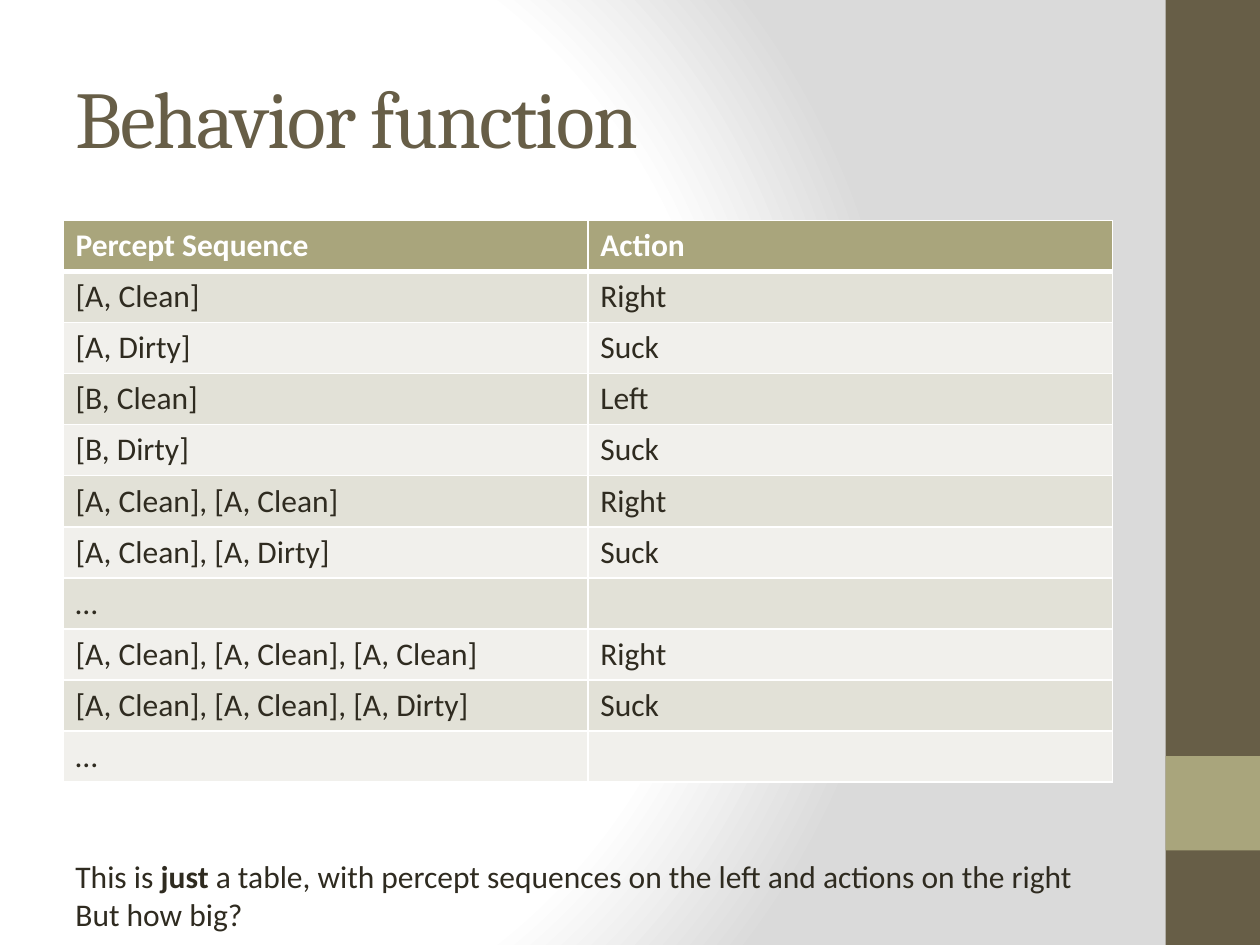
from typing import NamedTuple

from lxml.etree import SubElement
from pptx import Presentation
from pptx.dml.color import RGBColor
from pptx.enum.shapes import MSO_SHAPE
from pptx.enum.text import MSO_ANCHOR
from pptx.oxml import parse_xml
from pptx.oxml.ns import nsdecls, qn
from pptx.util import Inches, Pt

WHITE = RGBColor(0xFF, 0xFF, 0xFF)
GREY = RGBColor(0xDA, 0xDA, 0xDA)
BROWN = RGBColor(0x67, 0x5E, 0x47)
OLIVE = RGBColor(0xA9, 0xA5, 0x7C)
INK = RGBColor(0x2F, 0x2B, 0x20)
BAND_DARK = RGBColor(0xE2, 0xE1, 0xD7)
BAND_LIGHT = RGBColor(0xF1, 0xF0, 0xEC)


class SidePanel(NamedTuple):
    top: float
    height: float
    color: RGBColor


class Rule(NamedTuple):
    percepts: str
    action: str


SIDE_PANELS = [SidePanel(0, 7.5, BROWN), SidePanel(6, 0.75, OLIVE)]
RULES = [
    Rule("Percept Sequence", "Action"),
    Rule("[A, Clean]", "Right"),
    Rule("[A, Dirty]", "Suck"),
    Rule("[B, Clean]", "Left"),
    Rule("[B, Dirty]", "Suck"),
    Rule("[A, Clean], [A, Clean]", "Right"),
    Rule("[A, Clean], [A, Dirty]", "Suck"),
    Rule("…", ""),
    Rule("[A, Clean], [A, Clean], [A, Clean]", "Right"),
    Rule("[A, Clean], [A, Clean], [A, Dirty]", "Suck"),
    Rule("…", ""),
]


def set_background(slide) -> None:
    stops = "".join(
        f'<a:gs pos="{position * 1000}"><a:srgbClr val="{color}"/></a:gs>'
        for position, color in [(0, WHITE), (75, WHITE), (100, GREY)]
    )
    background = parse_xml(
        f'<p:bg {nsdecls("p", "a")}><p:bgPr><a:gradFill rotWithShape="1">'
        f'<a:gsLst>{stops}</a:gsLst><a:path path="circle">'
        '<a:fillToRect l="20000" t="50000" r="100000" b="50000"/></a:path>'
        "</a:gradFill><a:effectLst/></p:bgPr></p:bg>"
    )
    slide.element.cSld.insert(0, background)


def draw_side_panel(slide, panel: SidePanel) -> None:
    shape = slide.shapes.add_shape(
        MSO_SHAPE.RECTANGLE, Inches(9.25), Inches(panel.top), Inches(0.75), Inches(panel.height)
    )
    shape.shadow.inherit = False
    shape.fill.solid()
    shape.fill.fore_color.rgb = panel.color
    shape.line.fill.background()


def add_text(paragraph, text: str, *, size: float = 18, font: str = "Calibri",
             color: RGBColor = INK, bold: bool = False, spacing: float = 0) -> None:
    run = paragraph.add_run()
    run.text = text
    run.font.size = Pt(size)
    run.font.name = font
    run.font.color.rgb = color
    run.font.bold = bold
    if spacing:
        run.font._element.set("spc", str(int(spacing * 100)))


def add_text_frame(slide, left: float, top: float, width: float, height: float):
    box = slide.shapes.add_textbox(Inches(left), Inches(top), Inches(width), Inches(height))
    box.text_frame.word_wrap = True
    return box.text_frame


def set_borders(cell, bottom_width: float) -> None:
    properties = cell._tc.get_or_add_tcPr()
    widths = {"a:lnL": 1, "a:lnR": 1, "a:lnT": 1, "a:lnB": bottom_width}
    for tag, width in widths.items():
        line = SubElement(properties, qn(tag), w=str(Pt(width)))
        fill = SubElement(line, qn("a:solidFill"))
        SubElement(fill, qn("a:srgbClr"), val=str(WHITE))


def draw_table(slide, rules: list[Rule]) -> None:
    width, height = Inches(8.33), Inches(4.46)
    table = slide.shapes.add_table(
        len(rules), 2, Inches(0.5), Inches(1.75), width, height
    ).table
    for row_index, rule in enumerate(rules):
        header = row_index == 0
        band = BAND_DARK if row_index % 2 else BAND_LIGHT
        for column_index, text in enumerate(rule):
            cell = table.cell(row_index, column_index)
            set_borders(cell, 3 if header else 1)
            cell.fill.solid()
            cell.fill.fore_color.rgb = OLIVE if header else band
            if text:
                add_text(cell.text_frame.paragraphs[0], text,
                         color=WHITE if header else INK, bold=header)
        # A thick rule under the header meets the first body row
        if row_index == 1:
            for cell in table.rows[row_index].cells:
                cell._tc.tcPr.find(qn("a:lnT")).set("w", str(Pt(3)))


def main() -> None:
    presentation = Presentation()
    presentation.slide_width = Inches(10)
    presentation.slide_height = Inches(7.5)
    slide = presentation.slides.add_slide(presentation.slide_layouts[6])

    # Background and side bar
    set_background(slide)
    for panel in SIDE_PANELS:
        draw_side_panel(slide, panel)

    # Title
    title = add_text_frame(slide, 0.5, 0.3, 8.33, 1.25)
    title.vertical_anchor = MSO_ANCHOR.MIDDLE
    add_text(title.paragraphs[0], "Behavior function",
             size=46, font="Cambria", color=BROWN, spacing=-1)

    # Percepts and actions
    draw_table(slide, RULES)

    # Closing remark
    remark = add_text_frame(slide, 0.5, 6.75, 8.25, 0.71)
    statement = remark.paragraphs[0]
    add_text(statement, "This is ")
    add_text(statement, "just", bold=True)
    add_text(statement, " a table, with percept sequences on the left and actions on the right")
    add_text(remark.add_paragraph(), "But how big?")

    presentation.save("out.pptx")


if __name__ == "__main__":
    main()
